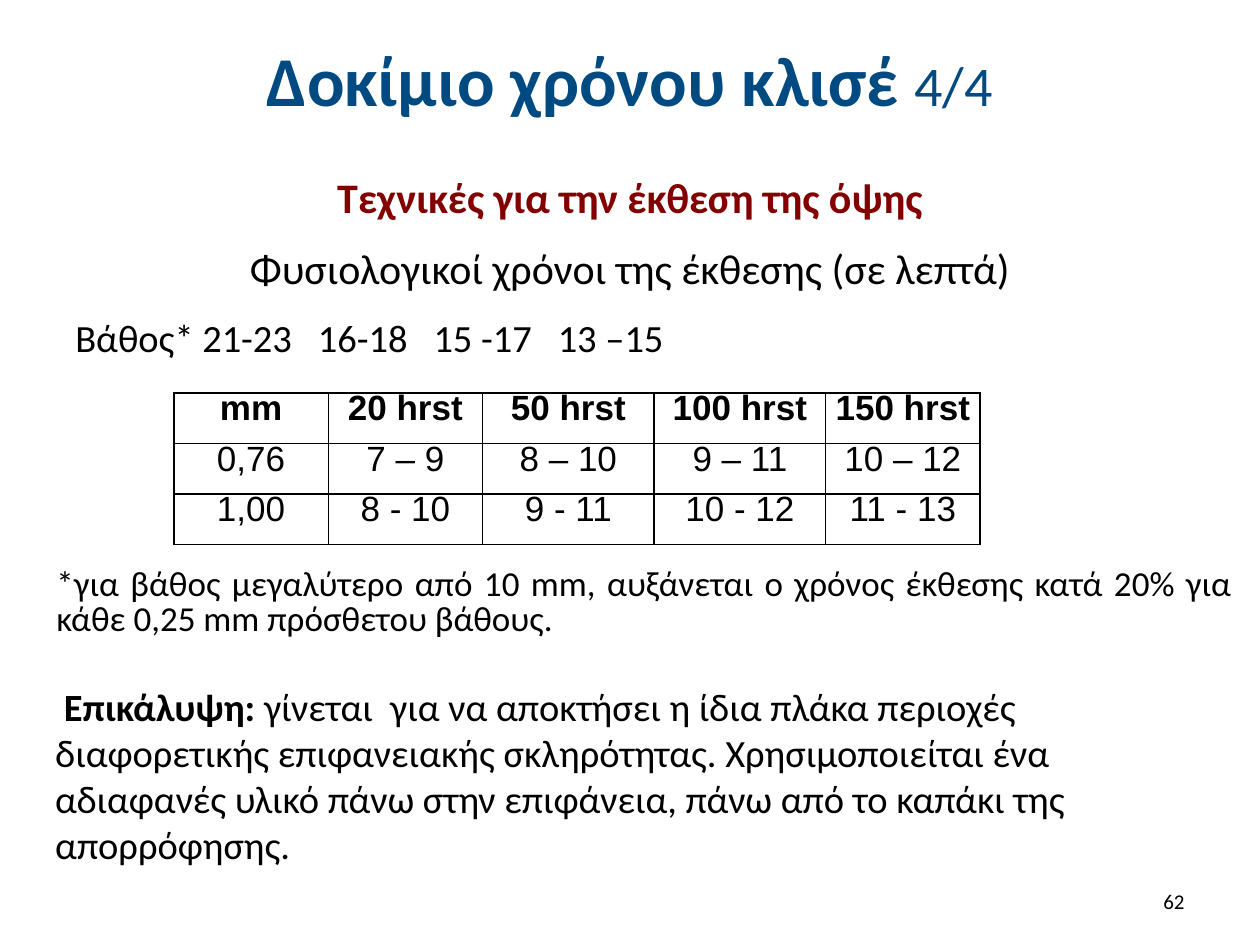
from dataclasses import dataclass

from lxml.etree import SubElement as Sub
from pptx import Presentation
from pptx.dml.color import RGBColor as RGB
from pptx.enum.text import MSO_ANCHOR as Anchor, PP_ALIGN as Align
from pptx.oxml.ns import qn
from pptx.util import Inches, Pt

WIDE, HIGH = Inches(10), Inches(7.5)
BLUE = RGB(0x00, 0x4A, 0x82)
RED = RGB(0x82, 0x00, 0x00)
BLACK = RGB(0x00, 0x00, 0x00)


@dataclass
class Run:
    text: str
    size: float
    color: RGB = BLACK
    bold: bool = False
    face: str = "Calibri"


@dataclass
class Para:
    runs: list[Run]
    form: dict


@dataclass
class Box:
    # Left, top, width and height as shares of the slide
    area: tuple[float, float, float, float]
    paras: list[Para]
    anchor: Anchor = Anchor.TOP


def apply(item, form: dict) -> None:
    for name, value in form.items():
        setattr(item, name, value)


def place(area: tuple) -> list[int]:
    return [round(part * side) for part, side in zip(area, (WIDE, HIGH) * 2)]


def write(line, para: Para) -> None:
    apply(line, para.form)
    for run in para.runs:
        piece = line.add_run()
        piece.text = run.text
        apply(piece.font, {"name": run.face, "size": Pt(run.size), "bold": run.bold})
        piece.font.color.rgb = run.color


def draw_box(slide, box: Box) -> None:
    frame = slide.shapes.add_textbox(*place(box.area)).text_frame
    apply(frame, {"word_wrap": True, "vertical_anchor": box.anchor})
    for i, para in enumerate(box.paras):
        write(frame.add_paragraph() if i else frame.paragraphs[0], para)


def rule(cell) -> None:
    """Put a thin black line on all four sides of a cell."""
    props = cell._tc.get_or_add_tcPr()
    for i, side in enumerate(("lnL", "lnR", "lnT", "lnB")):
        line = props.makeelement(qn(f"a:{side}"), {"w": str(Pt(1))})
        fill = Sub(line, qn("a:solidFill"))
        Sub(fill, qn("a:srgbClr"), val=str(BLACK))
        props.insert(i, line)


def draw_table(slide, area: tuple, rows: list, shares: list[float]) -> None:
    spot = place(area)
    table = slide.shapes.add_table(len(rows), len(shares), *spot).table
    apply(table, {"first_row": False, "horz_banding": False})
    for col, share in zip(table.columns, shares):
        col.width = round(spot[2] * share / sum(shares))
    pad = {"margin_left": Inches(0.07), "margin_right": Inches(0.07),
           "margin_top": 0, "margin_bottom": 0}
    for r, row in enumerate(rows):
        for c, text in enumerate(row):
            cell = table.cell(r, c)
            apply(cell, pad)
            cell.fill.background()
            rule(cell)
            run = Run(text, 20, bold=r == 0, face="Arial")
            write(cell.text_frame.paragraphs[0], Para([run], MID | TIGHT))


# Paragraph formats
MID = {"alignment": Align.CENTER}
LEFT = {"alignment": Align.LEFT}
RIGHT = {"alignment": Align.RIGHT}
FULL = {"alignment": Align.JUSTIFY}
TIGHT = {"line_spacing": Pt(20)}
GAP = {"space_before": Pt(12)}

BOXES = [
    # Title
    Box((0.05, 0.017, 0.9, 0.132), [Para([
        Run("Δοκίμιο χρόνου κλισέ ", 40, BLUE, True),
        Run("4/4", 32, BLUE)], MID)], Anchor.MIDDLE),
    # Headings over the table
    Box((0.05, 0.175, 0.9, 0.24), [
        Para([Run("Τεχνικές για την έκθεση της όψης", 24, RED, True)], MID),
        Para([Run("Φυσιολογικοί χρόνοι της έκθεσης (σε λεπτά)", 24)], MID | GAP),
        Para([Run("Βάθος* 21-23   16-18   15 -17   13 –15", 22)], LEFT | GAP)]),
    # Footnote of the table
    Box((0.035, 0.595, 0.953, 0.088), [Para([Run(
        "*για βάθος μεγαλύτερο από 10 mm, αυξάνεται ο χρόνος έκθεσης "
        "κατά 20% για κάθε 0,25 mm πρόσθετου βάθους.", 20)], FULL | TIGHT)]),
    # Closing text
    Box((0.034, 0.716, 0.91, 0.21), [Para([
        Run(" ", 18, bold=True, face="Arial"),
        Run("Επικάλυψη:", 22, bold=True),
        Run(" γίνεται  για να αποκτήσει η ίδια πλάκα περιοχές διαφορετικής "
            "επιφανειακής σκληρότητας. Χρησιμοποιείται ένα αδιαφανές υλικό πάνω "
            "στην επιφάνεια, πάνω από το καπάκι της απορρόφησης.", 22)], LEFT)]),
    # Page number
    Box((0.717, 0.927, 0.233, 0.053), [Para([Run("62", 12)], RIGHT)], Anchor.MIDDLE),
]

TIMES = [
    ["mm", "20 hrst", "50 hrst", "100 hrst", "150 hrst"],
    ["0,76", "7 – 9", "8 – 10", "9 – 11", "10 – 12"],
    ["1,00", "8 - 10", "9 - 11", "10 - 12", "11 - 13"],
]


def main() -> None:
    deck = Presentation()
    apply(deck, {"slide_width": WIDE, "slide_height": HIGH})
    slide = deck.slides.add_slide(deck.slide_layouts[6])
    for box in BOXES:
        draw_box(slide, box)
    draw_table(slide, (0.138, 0.416, 0.64, 0.16), TIMES, [0.9, 0.9, 1, 1, 0.9])
    deck.save("out.pptx")


if __name__ == "__main__":
    main()
